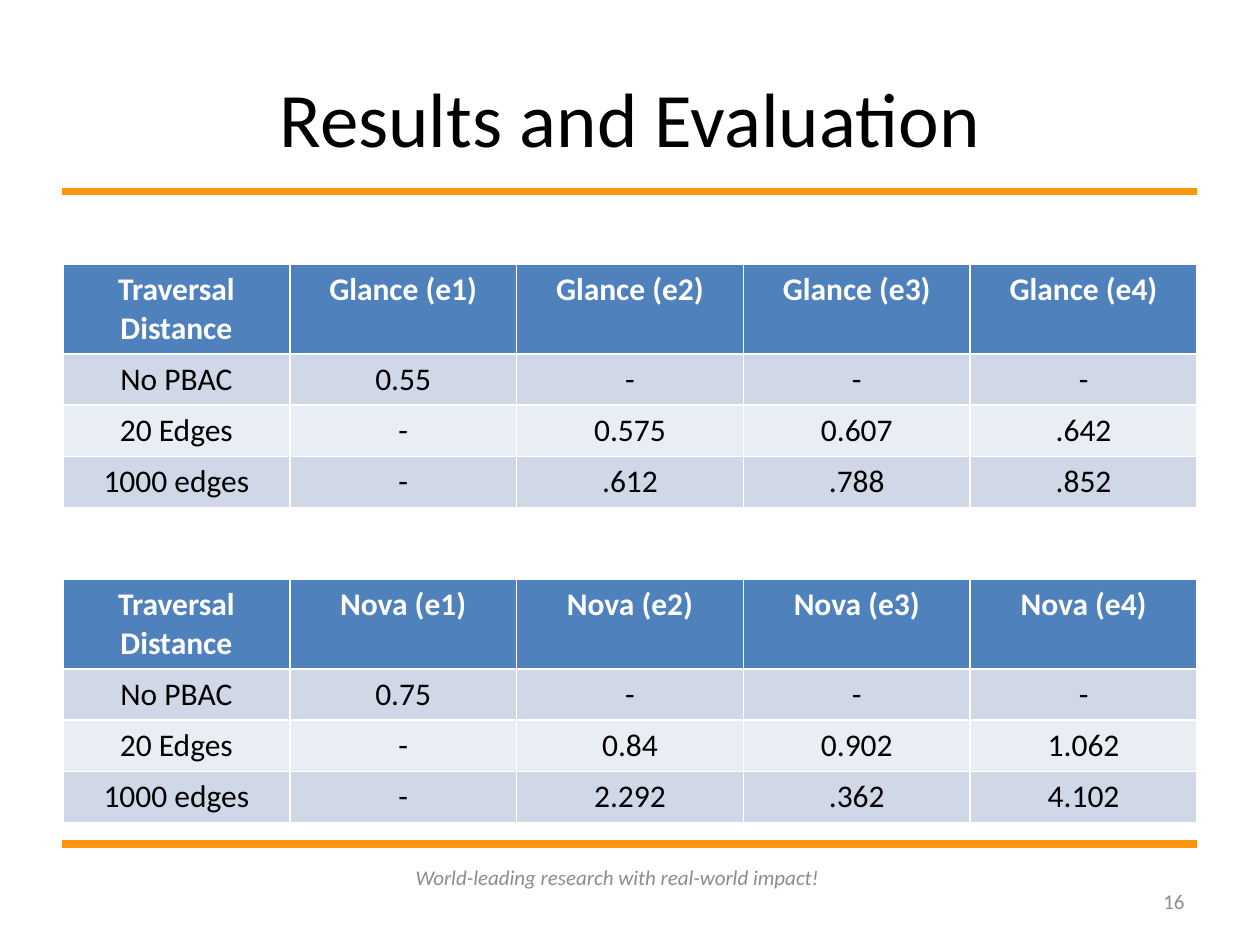
from pptx import Presentation
from pptx.dml.color import RGBColor
from pptx.enum import shapes, text
from pptx.oxml.ns import qn
from pptx.util import Pt
from lxml import etree

# Content
TITLE = "Results and Evaluation"
MOTTO = "World-leading research with real-world impact!"
PAGE = "16"
RUNS = ["e1", "e2", "e3", "e4"]
TABLES = [
    ("Glance", 151.2, [
        ("No PBAC", "0.55", "-", "-", "-"),
        ("20 Edges", "-", "0.575", "0.607", ".642"),
        ("1000 edges", "-", ".612", ".788", ".852"),
    ]),
    ("Nova", 331.2, [
        ("No PBAC", "0.75", "-", "-", "-"),
        ("20 Edges", "-", "0.84", "0.902", "1.062"),
        ("1000 edges", "-", "2.292", ".362", "4.102"),
    ]),
]

# Look
HEX = {"rule": "FF950E", "head": "4F81BD", "odd": "D0D8E8", "even": "E9EDF4",
       "ink": "000000", "white": "FFFFFF", "grey": "8C8C8C"}
FONT = "Calibri"
LEFT, WIDTH = 36, 648
HEAD_H, ROW_H = 50.4, 29.2
ALIGN = text.PP_ALIGN


def color(name):
    return RGBColor.from_string(HEX[name])


def write(frame, words, size, ink, align=ALIGN.CENTER, bold=False, italic=False):
    frame.text = words
    para = frame.paragraphs[0]
    para.alignment = align
    font = para.font
    font.name, font.size = FONT, Pt(size)
    font.bold, font.italic = bold, italic
    font.color.rgb = color(ink)


def add_rule(slide, y):
    line = slide.shapes.add_connector(
        shapes.MSO_CONNECTOR.STRAIGHT, Pt(35.3), Pt(y), Pt(684), Pt(y))
    line.line.color.rgb = color("rule")
    line.line.width = Pt(4.31)
    etree.SubElement(line._element.spPr, qn("a:effectLst"))


def add_note(slide, words, left, top, width, **style):
    box = slide.shapes.add_textbox(Pt(left), Pt(top), Pt(width), Pt(28.8))
    frame = box.text_frame
    frame.word_wrap = True
    frame.vertical_anchor = text.MSO_ANCHOR.MIDDLE
    write(frame, words, 12, "grey", **style)


def add_grid(slide, name, top, body):
    rows = [["Traversal Distance"] + [f"{name} ({run})" for run in RUNS]] + body
    count = len(rows[0])
    grid = slide.shapes.add_table(
        len(rows), count, Pt(LEFT), Pt(top), Pt(WIDTH),
        Pt(HEAD_H + ROW_H * len(body))).table
    for col in grid.columns:
        col.width = Pt(WIDTH / count)
    for r, row in enumerate(rows):
        head = r == 0
        grid.rows[r].height = Pt(HEAD_H if head else ROW_H)
        fill = "head" if head else "odd" if r % 2 else "even"
        for c, words in enumerate(row):
            cell = grid.cell(r, c)
            cell.fill.solid()
            cell.fill.fore_color.rgb = color(fill)
            write(cell.text_frame, words, 18, "white" if head else "ink", bold=head)


def main():
    deck = Presentation()
    deck.slide_width, deck.slide_height = Pt(720), Pt(540)
    slide = deck.slides.add_slide(deck.slide_layouts[5])

    # Rules above and below the results
    for y in (109.4, 482.4):
        add_rule(slide, y)

    # Title
    title = slide.shapes.title
    title.left, title.top = Pt(LEFT), Pt(21.6)
    title.width, title.height = Pt(WIDTH), Pt(90)
    title.text_frame.vertical_anchor = text.MSO_ANCHOR.MIDDLE
    write(title.text_frame, TITLE, 44, "ink")

    # Result tables
    for name, top, body in TABLES:
        add_grid(slide, name, top, body)

    # Footer
    add_note(slide, MOTTO, 222.5, 486.9, 260.6, italic=True)
    add_note(slide, PAGE, 516, 500.4, 168, align=ALIGN.RIGHT)

    deck.save("out.pptx")


if __name__ == "__main__":
    main()
